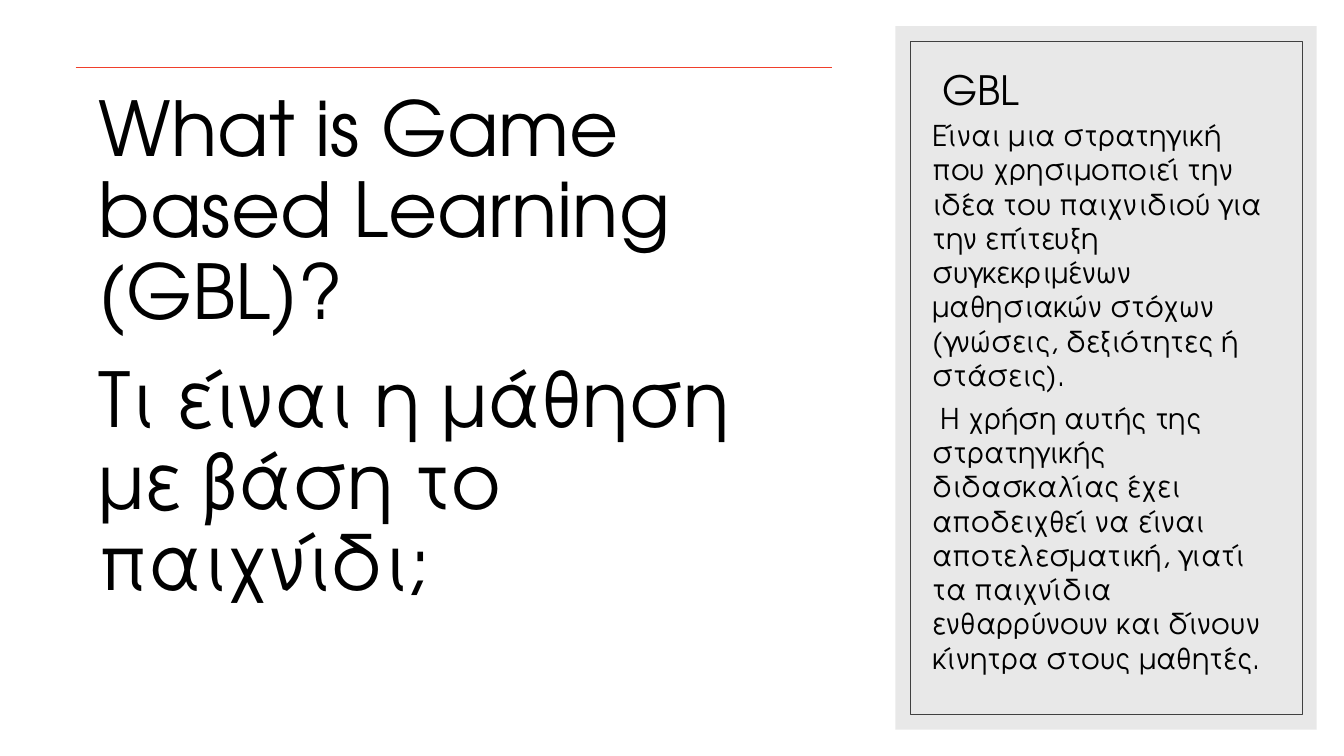
from lxml.etree import SubElement
from pptx import Presentation
from pptx.dml.color import RGBColor
from pptx.enum.shapes import MSO_CONNECTOR, MSO_SHAPE
from pptx.enum.text import MSO_ANCHOR, PP_ALIGN
from pptx.oxml.ns import qn
from pptx.util import Pt

PX = 9144  # 100 px to the inch
FONT = "TeX Gyre Adventor"
BLACK = RGBColor(0x00, 0x00, 0x00)
PANEL = RGBColor(0xD9, 0xD9, 0xD9)
FRAME = RGBColor(0x40, 0x40, 0x40)
RED = RGBColor(0xF0, 0x3F, 0x2B)

prs = Presentation()
prs.slide_width, prs.slide_height = 1333 * PX, 750 * PX
s = prs.slides.add_slide(prs.slide_layouts[6])


def add_text(paragraphs, box, size, margins=(0, 0), anchor=MSO_ANCHOR.TOP,
             spacing=None, after=0, indents=(0, 0)):
    sp = s.shapes.add_textbox(*(v * PX for v in box))
    tf = sp.text_frame
    tf.word_wrap = True
    tf.vertical_anchor = anchor
    tf.margin_left = tf.margin_right = margins[0] * PX
    tf.margin_top = tf.margin_bottom = margins[1] * PX
    for i, text in enumerate(paragraphs):
        p = tf.paragraphs[0] if i == 0 else tf.add_paragraph()
        p.alignment = PP_ALIGN.LEFT
        p.line_spacing = spacing
        p.space_after = Pt(after)
        if indents[i]:
            p._p.get_or_add_pPr().set("indent", str(indents[i] * PX))
        r = p.add_run()
        r.text = text
        r.font.name, r.font.size = FONT, Pt(size)
        r.font.color.rgb = BLACK


# Side panel: translucent grey with a thin inner frame
panel = s.shapes.add_shape(MSO_SHAPE.RECTANGLE, 888 * PX, 26 * PX, 418 * PX, 698 * PX)
panel.shadow.inherit = False
panel.fill.solid()
panel.fill.fore_color.rgb = PANEL
color = panel.fill._xPr.find(qn("a:solidFill")).find(qn("a:srgbClr"))
SubElement(color, qn("a:alpha"), val="60000")
panel.line.fill.background()

frame = s.shapes.add_shape(MSO_SHAPE.RECTANGLE, 903 * PX, 41 * PX, 389 * PX, 668 * PX)
frame.shadow.inherit = False
frame.fill.background()
frame.line.color.rgb = FRAME
frame.line.width = Pt(0.5)

# Panel heading and body
add_text(["GBL"], (925, 66, 346, 52), 28.8, margins=(10, 5), anchor=MSO_ANCHOR.BOTTOM)
add_text(
    ["Είναι μια στρατηγική που χρησιμοποιεί την ιδέα του παιχνιδιού για την "
     "επίτευξη συγκεκριμένων μαθησιακών στόχων (γνώσεις, δεξιότητες ή στάσεις).",
     "Η χρήση αυτής της στρατηγικής διδασκαλίας έχει αποδειχθεί να είναι "
     "αποτελεσματική, γιατί τα παιχνίδια ενθαρρύνουν και δίνουν κίνητρα στους μαθητές."],
    (925, 117, 346, 567), 20.4, after=6, indents=(0, 8))

# Red rule above the question
rule = s.shapes.add_connector(MSO_CONNECTOR.STRAIGHT, 75 * PX, 67 * PX, 825 * PX, 67 * PX)
rule.line.color.rgb = RED
rule.line.width = Pt(1)
SubElement(rule._element.spPr, qn("a:effectLst"))

# Question in both languages
add_text(
    ["What is Game based Learning (GBL)?", "Τι είναι η μάθηση με βάση το παιχνίδι;"],
    (75, 67, 750, 583), 54, margins=(23, 23), spacing=0.9, after=19)

prs.save("out.pptx")
